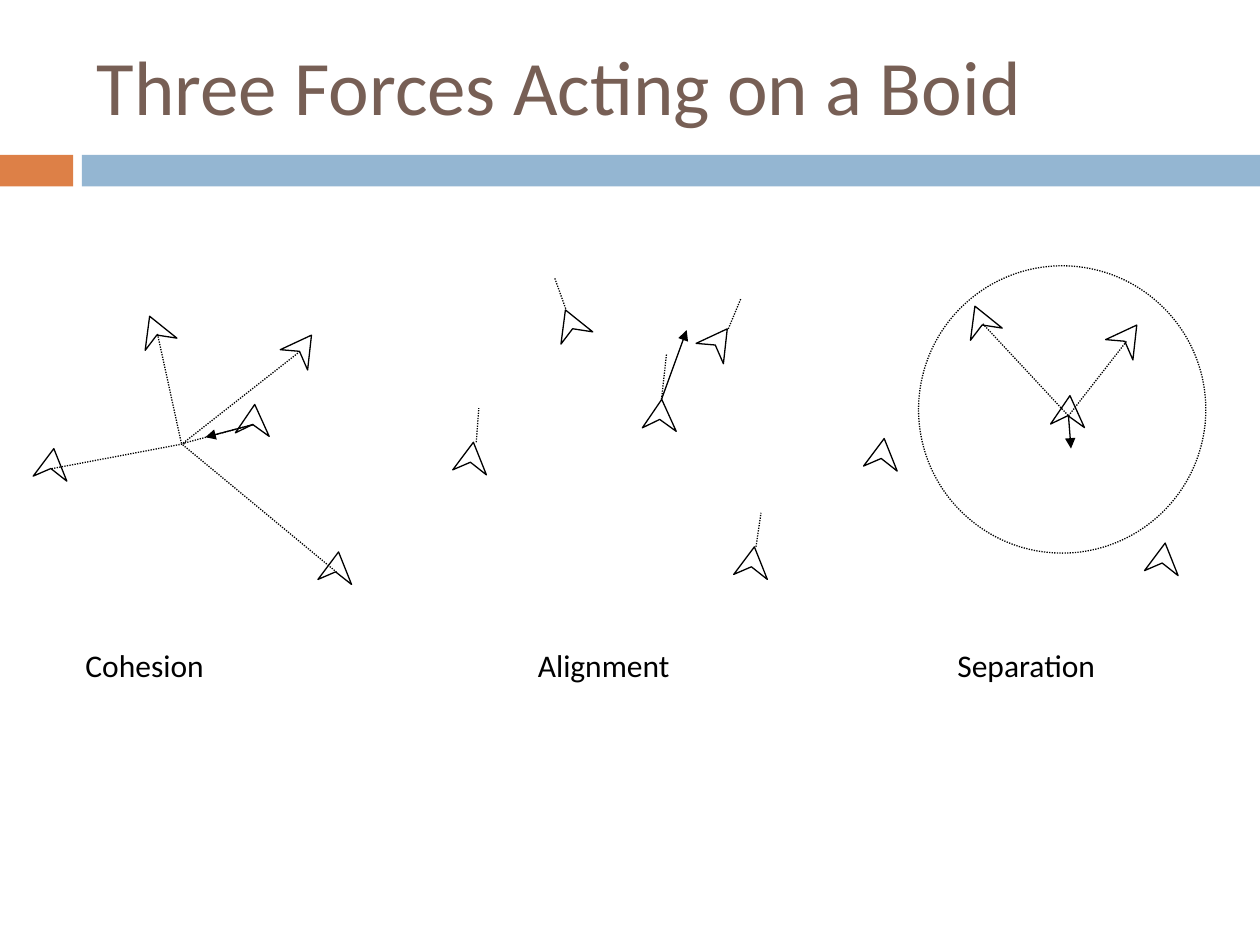
"""Build the slide on the three forces that act on a boid."""
from dataclasses import dataclass

from lxml import etree
from pptx import Presentation, util as u
from pptx.dml.color import RGBColor as Rgb
from pptx.enum import dml, shapes, text
from pptx.oxml.ns import qn


@dataclass(frozen=True)
class Theme:
    orange: Rgb = Rgb(0xDD, 0x80, 0x47)
    blue: Rgb = Rgb(0x94, 0xB6, 0xD2)
    brown: Rgb = Rgb(0x77, 0x5F, 0x55)
    black: Rgb = Rgb(0, 0, 0)
    white: Rgb = Rgb(255, 255, 255)
    font: str = "Calibri"
    title: int = 44
    label: int = 18
    line: float = 0.75


theme = Theme()
deck = Presentation()
deck.slide_width, deck.slide_height = u.Inches(10), u.Inches(7.5)
slide = deck.slides.add_slide(deck.slide_layouts[6])
items = slide.shapes


def write(words, left, top, width, height, size, color, anchor):
    frame = items.add_textbox(*map(u.Inches, (left, top, width, height))).text_frame
    frame.word_wrap = True
    frame.vertical_anchor = anchor
    run = frame.paragraphs[0].add_run()
    run.text = words
    run.font.name = theme.font
    run.font.size = u.Pt(size)
    run.font.color.rgb = color


def ink(shape, fill):
    shape.shadow.inherit = False
    shape.fill.solid()
    shape.fill.fore_color.rgb = fill
    shape.line.color.rgb = theme.black
    shape.line.width = u.Pt(theme.line)


for left, width, color in [(0, 0.58, theme.orange), (0.65, 9.35, theme.blue)]:
    bar = items.add_shape(shapes.MSO_SHAPE.RECTANGLE, *map(u.Inches, (left, 1.23, width, 0.25)))
    ink(bar, color)
    bar.line.fill.background()

ring = items.add_shape(shapes.MSO_SHAPE.OVAL, *map(u.Inches, (7.29, 2.11, 2.28, 2.28)))
ink(ring, theme.white)
ring.line.dash_style = dml.MSO_LINE.ROUND_DOT

flock = {
    5.9: [(1.88, 3.21), (5.11, 3.17), (8.35, 3.14)],
    36.6: [(2.27, 2.64), (5.57, 2.59), (8.82, 2.56)],
    339: [(1.1, 2.5), (4.4, 2.45), (7.65, 2.42)],
    8.5: [(2.54, 4.38), (5.84, 4.34), (9.1, 4.31), (0.28, 3.56), (3.61, 3.51), (6.87, 3.48)],
}
outline = [(0.27, 0.24), (0.13, 0.16), (0, 0.24)]
for angle, spots in flock.items():
    for left, top in spots:
        pen = items.build_freeform(u.Inches(left + 0.13), u.Inches(top))
        pen.add_line_segments([(u.Inches(left + x), u.Inches(top + y)) for x, y in outline])
        boid = pen.convert_to_shape()
        boid.rotation = angle
        ink(boid, theme.white)

dots = [
    (4.49, 2.45, 4.4, 2.2), (5.78, 2.61, 5.88, 2.37), (6, 4.34, 6.04, 4.07),
    (5.25, 3.17, 5.29, 2.81), (3.78, 3.51, 3.8, 3.24),
    (1.25, 2.65, 1.44, 3.52), (2.38, 2.79, 1.45, 3.52), (0.41, 3.72, 1.47, 3.52),
    (1.45, 3.53, 2.67, 4.54), (2.01, 3.37, 1.45, 3.52),
    (7.8, 2.57, 8.48, 3.3), (8.94, 2.71, 8.48, 3.3),
]
forces = [(5.25, 3.17, 5.45, 2.62), (2.01, 3.37, 1.63, 3.47), (8.48, 3.3, 8.5, 3.56)]
for ends in dots + forces:
    line = items.add_connector(shapes.MSO_CONNECTOR.STRAIGHT, *map(u.Inches, ends))
    line.line.color.rgb = theme.black
    line.line.width = u.Pt(theme.line)
    if ends in forces:
        etree.SubElement(line.line._get_or_add_ln(), qn("a:tailEnd"), type="triangle")
    else:
        line.line.dash_style = dml.MSO_LINE.ROUND_DOT
    etree.SubElement(line._element.spPr, qn("a:effectLst"))

write("Three Forces Acting on a Boid", 0.67, 0.13, 8.92, 1.08,
      theme.title, theme.brown, text.MSO_ANCHOR.MIDDLE)
for left, force in [(0.58, "Cohesion"), (4.17, "Alignment"), (7.5, "Separation")]:
    write(force, left, 5.08, 1.58, 0.4, theme.label, theme.black, text.MSO_ANCHOR.TOP)

deck.save("out.pptx")
